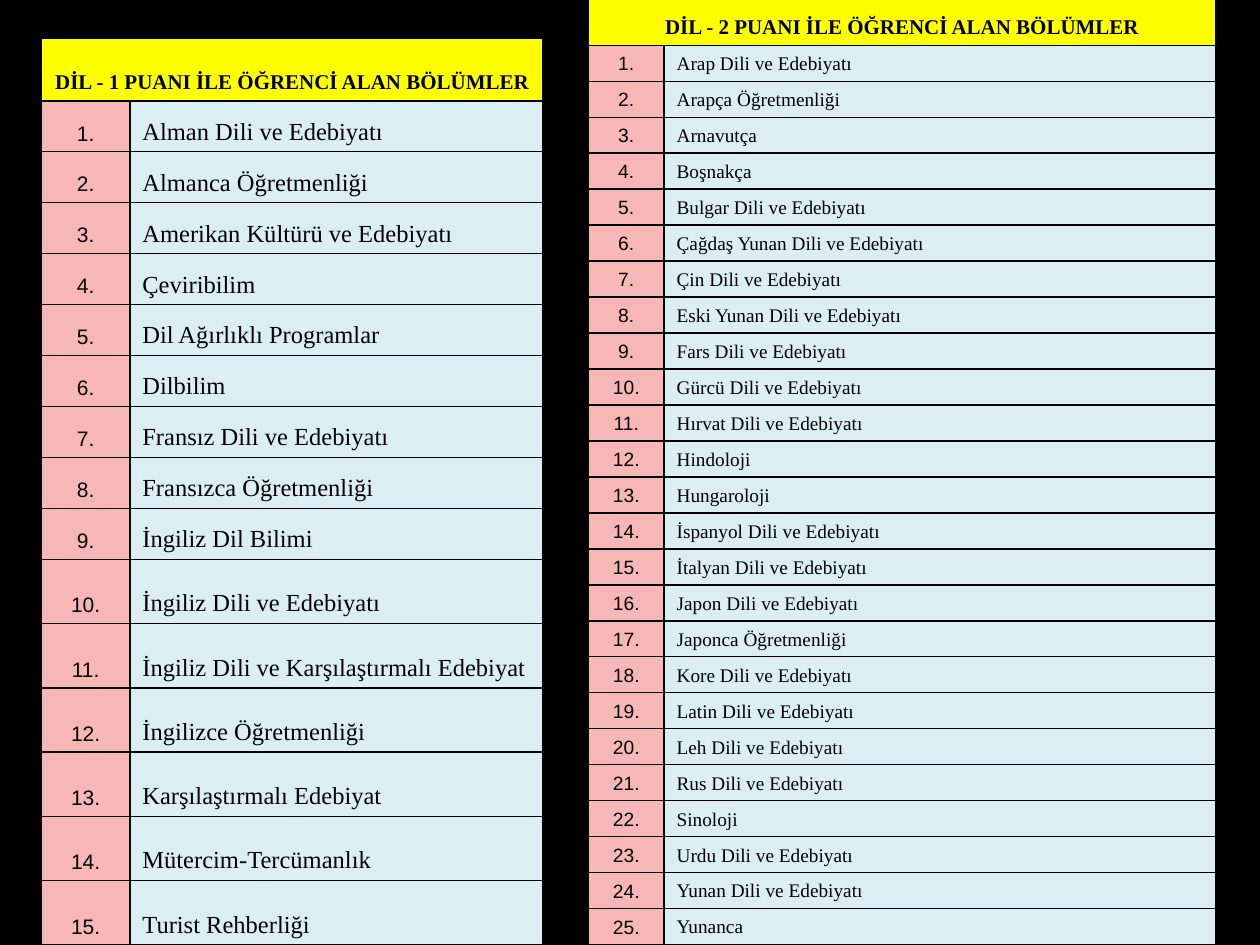
from lxml import etree
from pptx import Presentation
from pptx import util as u
from pptx.dml.color import RGBColor
from pptx.enum import text
from pptx.oxml import ns

SERIF, SANS = "Times New Roman", "Arial"
BLACK, YELLOW, PINK, BLUE = "000000", "FFFF00", "F8B7B7", "DBEEF4"

DIL_1 = [
    "Alman Dili ve Edebiyatı",
    "Almanca Öğretmenliği",
    "Amerikan Kültürü ve Edebiyatı",
    "Çeviribilim",
    "Dil Ağırlıklı Programlar",
    "Dilbilim",
    "Fransız Dili ve Edebiyatı",
    "Fransızca Öğretmenliği",
    "İngiliz Dil Bilimi",
    "İngiliz Dili ve Edebiyatı",
    "İngiliz Dili ve Karşılaştırmalı Edebiyat",
    "İngilizce Öğretmenliği",
    "Karşılaştırmalı Edebiyat",
    "Mütercim-Tercümanlık",
    "Turist Rehberliği",
]
DIL_2 = [
    "Arap Dili ve Edebiyatı",
    "Arapça Öğretmenliği",
    "Arnavutça",
    "Boşnakça",
    "Bulgar Dili ve Edebiyatı",
    "Çağdaş Yunan Dili ve Edebiyatı",
    "Çin Dili ve Edebiyatı",
    "Eski Yunan Dili ve Edebiyatı",
    "Fars Dili ve Edebiyatı",
    "Gürcü Dili ve Edebiyatı",
    "Hırvat Dili ve Edebiyatı",
    "Hindoloji",
    "Hungaroloji",
    "İspanyol Dili ve Edebiyatı",
    "İtalyan Dili ve Edebiyatı",
    "Japon Dili ve Edebiyatı",
    "Japonca Öğretmenliği",
    "Kore Dili ve Edebiyatı",
    "Latin Dili ve Edebiyatı",
    "Leh Dili ve Edebiyatı",
    "Rus Dili ve Edebiyatı",
    "Sinoloji",
    "Urdu Dili ve Edebiyatı",
    "Yunan Dili ve Edebiyatı",
    "Yunanca",
]


def rgb(value):
    return RGBColor.from_string(value)


def add_borders(cell):
    tc_pr = cell._tc.get_or_add_tcPr()
    for side in ("lnL", "lnR", "lnT", "lnB"):
        line = etree.SubElement(tc_pr, ns.qn(f"a:{side}"), w=str(u.Pt(1)))
        fill = etree.SubElement(line, ns.qn("a:solidFill"))
        etree.SubElement(fill, ns.qn("a:srgbClr"), val=BLACK)


def style_cell(cell, fill):
    add_borders(cell)
    cell.fill.solid()
    cell.fill.fore_color.rgb = rgb(fill)
    cell.vertical_anchor = text.MSO_ANCHOR.BOTTOM


def write_cell(cell, words, fill, font, size, bold=False, centred=True):
    style_cell(cell, fill)
    p = cell.text_frame.paragraphs[0]
    p.text = words
    p.alignment = text.PP_ALIGN.CENTER if centred else text.PP_ALIGN.LEFT
    p.font.name = font
    p.font.size = u.Pt(size)
    p.font.bold = bold
    p.font.color.rgb = rgb(BLACK)


def add_department_table(s, title, names, left, top, columns, rows, number_size, name_size):
    frame = s.shapes.add_table(
        len(rows), len(columns), u.Inches(left), u.Inches(top),
        u.Inches(sum(columns)), u.Inches(sum(rows)))
    table = frame.table
    for column, width in zip(table.columns, columns):
        column.width = u.Inches(width)
    for row, height in zip(table.rows, rows):
        row.height = u.Inches(height)
    table.cell(0, 0).merge(table.cell(0, 1))
    write_cell(table.cell(0, 0), title, YELLOW, SERIF, 12, bold=True)
    style_cell(table.cell(0, 1), YELLOW)
    for i, name in enumerate(names, 1):
        write_cell(table.cell(i, 0), f"{i}.", PINK, SANS, number_size)
        write_cell(table.cell(i, 1), name, BLUE, SERIF, name_size, centred=False)


def main():
    prs = Presentation()
    prs.slide_width, prs.slide_height = u.Inches(10), u.Inches(7.5)
    s = prs.slides.add_slide(prs.slide_layouts[6])
    s.background.fill.solid()
    s.background.fill.fore_color.rgb = rgb(BLACK)

    tall_rows = [0.51] * 6
    short_height = (7.2 - 0.5 - sum(tall_rows)) / 9
    add_department_table(
        s, "DİL - 1 PUANI İLE ÖĞRENCİ ALAN BÖLÜMLER", DIL_1, 0.33, 0.3,
        [0.7, 3.28], [0.5] + [short_height] * 9 + tall_rows, 12, 14)

    even_height = (7.53 - 0.39) / len(DIL_2)
    add_department_table(
        s, "DİL - 2 PUANI İLE ÖĞRENCİ ALAN BÖLÜMLER", DIL_2, 4.67, -0.03,
        [0.6, 4.38], [0.39] + [even_height] * len(DIL_2), 11, 11)

    prs.save("out.pptx")


if __name__ == "__main__":
    main()
